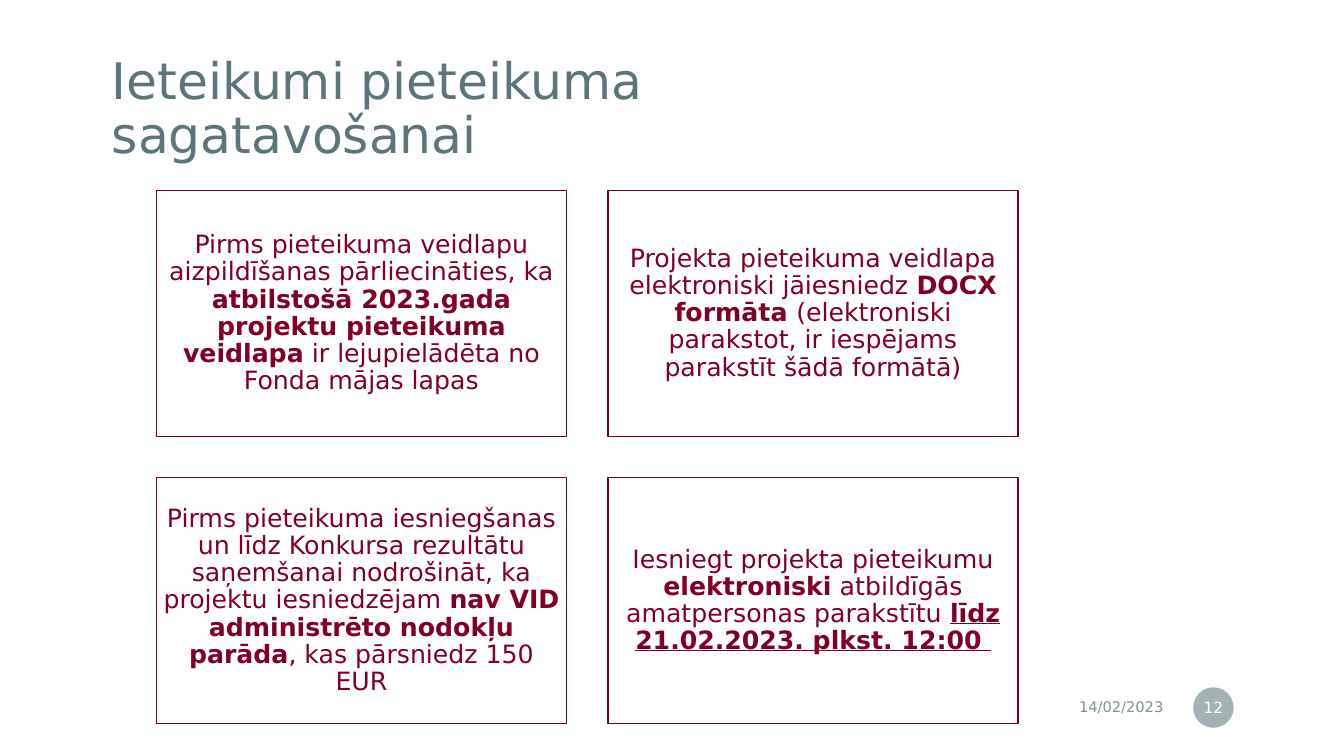
from dataclasses import dataclass

from lxml.etree import SubElement
from pptx import Presentation
from pptx.dml.color import RGBColor
from pptx.enum.shapes import MSO_SHAPE as Shape
from pptx.enum.text import MSO_ANCHOR as Anchor, MSO_AUTO_SIZE as AutoSize, PP_ALIGN as Align
from pptx.oxml.ns import qn
from pptx.util import Cm, Pt


@dataclass(frozen=True)
class Theme:
    font: str = "DejaVu Sans"
    title: str = "5B757A"
    muted: str = "7C9396"
    card_line: str = "740021"
    card_text: str = "800024"
    white: str = "FFFFFF"
    title_size: float = 36
    card_size: float = 18
    number_size: float = 11
    date_size: float = 10.5


class SlideBuilder:
    def __init__(self, slide, theme):
        self.slide = slide
        self.theme = theme

    def set_text(self, shape, runs, size, color, align, insets=(0.25, 0.13), line_spacing=1.0):
        """Fill a shape with one paragraph; each run is (text, style letters b and u)."""
        frame = shape.text_frame
        frame.word_wrap = True
        frame.auto_size = AutoSize.NONE
        frame.vertical_anchor = Anchor.MIDDLE
        frame.margin_left = frame.margin_right = Cm(insets[0])
        frame.margin_top = frame.margin_bottom = Cm(insets[1])
        paragraph = frame.paragraphs[0]
        paragraph.alignment = align
        paragraph.line_spacing = line_spacing
        for text, style in runs:
            run = paragraph.add_run()
            run.text = text
            run.font.name = self.theme.font
            run.font.size = Pt(size)
            run.font.color.rgb = RGBColor.from_string(color)
            run.font.bold = "b" in style
            run.font.underline = "u" in style

    def title(self, text):
        title = self.slide.shapes.title
        title.left, title.top, title.width, title.height = Cm(2.31), Cm(1.22), Cm(22.17), Cm(3.12)
        self.set_text(title, [(text, "")], self.theme.title_size, self.theme.title,
                      Align.LEFT, insets=(0.51, 0.51), line_spacing=0.9)

    def date(self, text):
        box = self.slide.shapes.add_textbox(Cm(21.92), Cm(17.37), Cm(7.65), Cm(0.89))
        self.set_text(box, [(text, "")], self.theme.date_size, self.theme.muted, Align.RIGHT)

    def add_filled(self, kind, left, top, width, height, color):
        shape = self.slide.shapes.add_shape(kind, Cm(left), Cm(top), Cm(width), Cm(height))
        shape.shadow.inherit = False
        shape.fill.solid()
        shape.fill.fore_color.rgb = RGBColor.from_string(color)
        return shape

    def page_number(self, text, opacity=70):
        badge = self.add_filled(Shape.OVAL, 30.07, 17.32, 1.02, 1.02, self.theme.muted)
        badge.line.fill.background()
        fill_color = badge.element.spPr.find(f"{qn('a:solidFill')}/{qn('a:srgbClr')}")
        SubElement(fill_color, qn("a:alpha"), val=str(opacity * 1000))
        self.set_text(badge, [(text, "")], self.theme.number_size, self.theme.white,
                      Align.CENTER, insets=(0.05, 0.13))

    def card(self, left, top, width, height, runs):
        card = self.add_filled(Shape.RECTANGLE, left, top, width, height, self.theme.white)
        card.line.color.rgb = RGBColor.from_string(self.theme.card_line)
        card.line.width = Pt(1)
        self.set_text(card, runs, self.theme.card_size, self.theme.card_text,
                      Align.CENTER, insets=(0.18, 0.18), line_spacing=0.9)


RECOMMENDATIONS = [
    [("Pirms pieteikuma veidlapu aizpildīšanas pārliecināties, ka", ""),
     (" atbilstošā 2023.gada projektu pieteikuma veidlapa", "b"),
     (" ir lejupielādēta no Fonda mājas lapas", "")],
    [("Projekta pieteikuma veidlapa elektroniski jāiesniedz ", ""),
     ("DOCX formāta ", "b"),
     ("(elektroniski parakstot, ir iespējams parakstīt šādā formātā)", "")],
    [("Pirms pieteikuma iesniegšanas un līdz Konkursa rezultātu saņemšanai nodrošināt, "
      "ka projektu iesniedzējam ", ""),
     ("nav VID administrēto nodokļu parāda", "b"),
     (", kas pārsniedz 150 EUR", "")],
    [("Iesniegt projekta pieteikumu ", ""),
     ("elektroniski", "b"),
     (" atbildīgās amatpersonas parakstītu ", ""),
     ("līdz 21.02.2023. plkst. 12:00 ", "bu")],
]
GRID_LEFT, GRID_TOP = 3.94, 4.8
CARD_WIDTH, CARD_HEIGHT, GAP = 10.34, 6.2, 1.04
COLUMNS = 2


def main():
    presentation = Presentation()
    presentation.slide_width, presentation.slide_height = Cm(33.87), Cm(19.05)
    title_only = presentation.slide_layouts[5]
    builder = SlideBuilder(presentation.slides.add_slide(title_only), Theme())
    builder.title("Ieteikumi pieteikuma sagatavošanai")
    builder.date("14/02/2023")
    builder.page_number("12")
    for index, runs in enumerate(RECOMMENDATIONS):
        row, column = divmod(index, COLUMNS)
        builder.card(GRID_LEFT + column * (CARD_WIDTH + GAP),
                     GRID_TOP + row * (CARD_HEIGHT + GAP),
                     CARD_WIDTH, CARD_HEIGHT, runs)
    presentation.save("out.pptx")


if __name__ == "__main__":
    main()
